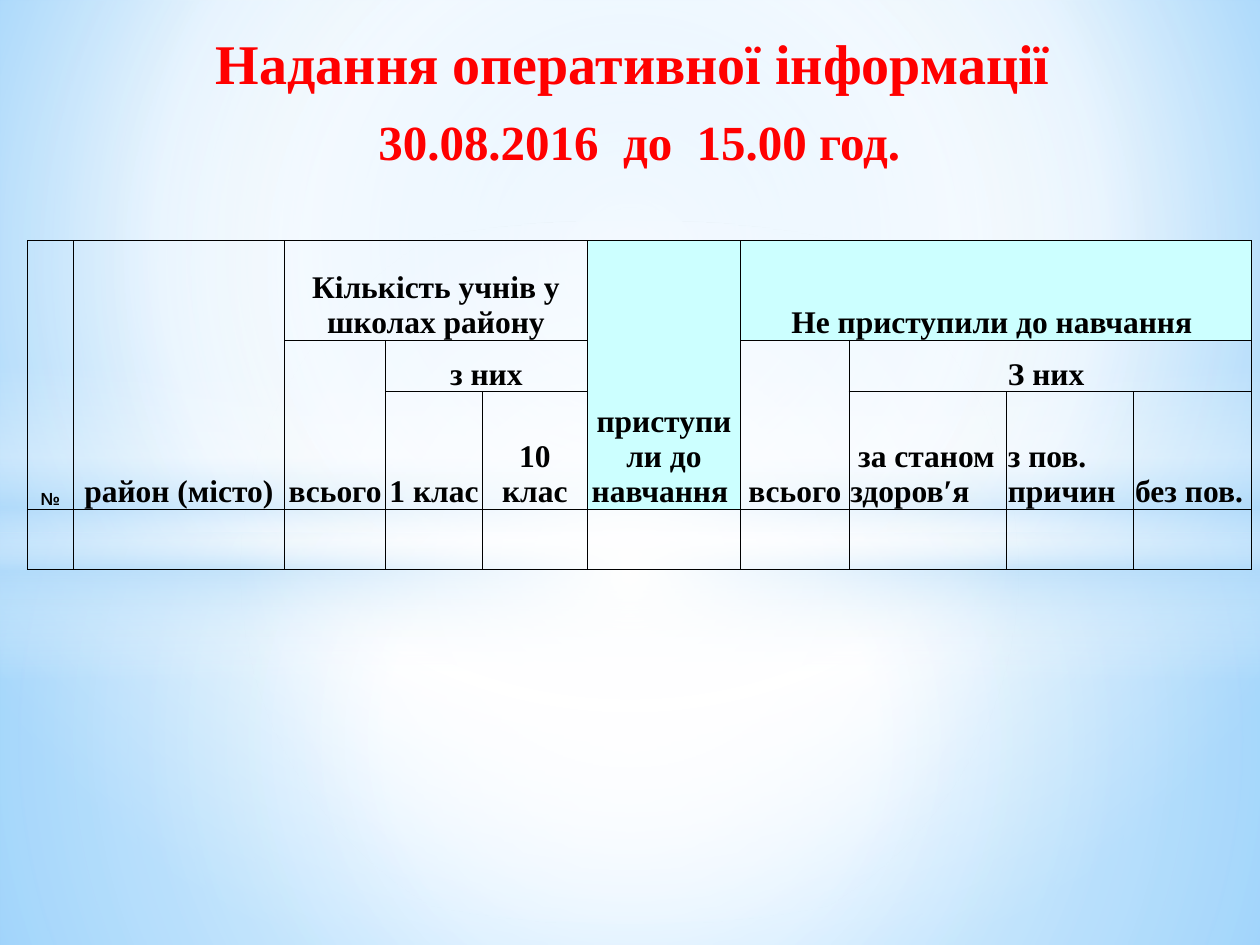
from dataclasses import dataclass

from lxml import etree
from pptx import Presentation
from pptx import util as u
from pptx.dml.color import RGBColor
from pptx.enum import shapes, text
from pptx.oxml import ns


@dataclass(frozen=True)
class Theme:
    serif: str = "Times New Roman"
    sans: str = "Arial"
    red: str = "FF0000"
    ink: str = "000000"
    aqua: str = "CCFFFF"
    sky: str = "B4DCFA"
    white: str = "FFFFFF"
    head: int = 32
    sub: int = 28
    cell: int = 18
    tiny: int = 10
    rule: float = 0.5


T = Theme()
MID = (50, 50, 50, 50)
COLS = (0.36, 1.68, 0.8, 0.77, 0.83, 1.22, 0.86, 1.25, 1.01, 0.93)
ROWS = (0.79, 0.41, 0.93, 0.48)

# Row, column, rows spanned, columns spanned, text, format
HEADS = (
    (0, 0, 3, 1, "№", {"name": T.sans, "size": T.tiny}),
    (0, 1, 3, 1, "район (місто)", {}),
    (0, 2, 1, 3, "Кількість учнів у школах району", {}),
    (0, 5, 3, 1, "приступили до навчання ", {"fill": T.aqua}),
    (0, 6, 1, 4, "Не приступили до навчання ", {"fill": T.aqua}),
    (1, 2, 2, 1, "всього", {}),
    (1, 3, 1, 2, "з них", {}),
    (1, 6, 2, 1, "всього", {}),
    (1, 7, 1, 3, "З них ", {}),
    (2, 3, 1, 1, "1 клас", {}),
    (2, 4, 1, 1, "10 клас", {}),
    (2, 7, 1, 1, " за станом здоров′я", {"left": True}),
    (2, 8, 1, 1, "з пов. причин", {"left": True}),
    (2, 9, 1, 1, "без пов.", {"left": True}),
)


def apply(obj, fmt):
    for key, val in fmt.items():
        setattr(obj, key, val)


def style(font, name, size, hue):
    apply(font, {"name": name, "size": u.Pt(size), "bold": True})
    font.color.rgb = RGBColor.from_string(hue)


def node(up, tag, **atts):
    return etree.SubElement(up, ns.qn("a:" + tag),
                            {k: str(v) for k, v in atts.items()})


def blend(fill, props, stops, rim=None):
    """Gradient of (place, colour, opacity); radial with rim, else downward."""
    fill.solid()
    old = props.find(ns.qn("a:solidFill"))
    grad = etree.Element(ns.qn("a:gradFill"), rotWithShape="1")
    props.replace(old, grad)
    bag = node(grad, "gsLst")
    for pos, hue, clear in stops:
        tint = node(node(bag, "gs", pos=pos * 1000), "srgbClr", val=hue)
        if clear < 100:
            node(tint, "alpha", val=clear * 1000)
    if rim:
        way = node(grad, "path", path="circle")
        node(way, "fillToRect", **{k: v * 1000 for k, v in zip("ltrb", rim)})
    else:
        node(grad, "lin", ang=5400000, scaled=0)


def veil(slide, kind, top, high, stops, rim=MID):
    box = slide.shapes.add_shape(kind, 0, u.Inches(top),
                                 u.Inches(10), u.Inches(high))
    box.shadow.inherit = False
    box.line.fill.background()
    blend(box.fill, box._element.spPr, stops, rim)


def backdrop(slide):
    back = slide.background
    back.fill.solid()
    props = slide._element.cSld.find(".//" + ns.qn("p:bgPr"))
    blend(back.fill, props, ((0, "9ED5FF", 100), (60, T.white, 100),
                             (100, "5BB9FF", 100)), (20, 10, 20, 60))
    rect, oval = shapes.MSO_SHAPE.RECTANGLE, shapes.MSO_SHAPE.OVAL
    veil(slide, rect, 4.23, 3.27,
         ((0, T.white, 91), (37, T.white, 76), (100, T.sky, 79)))
    veil(slide, rect, 0, 4.23,
         ((0, T.white, 89), (48, T.white, 62), (100, T.sky, 79)))
    veil(slide, rect, 2.9, 2.5,
         ((0, T.white, 0), (29, T.white, 30), (45, T.sky, 40),
          (55, T.white, 26), (65, T.sky, 60), (100, T.white, 0)), None)
    veil(slide, oval, 1.75, 5.58, ((0, T.white, 100), (54, T.white, 0)))


def heading(slide):
    title, box = slide.placeholders
    title._element.getparent().remove(title._element)
    apply(box, {"left": u.Inches(0.52), "top": u.Inches(0.18),
                "width": u.Inches(9.01), "height": u.Inches(1.24)})
    frame = box.text_frame
    apply(frame, {"word_wrap": True, "auto_size": text.MSO_AUTO_SIZE.NONE,
                  "vertical_anchor": text.MSO_ANCHOR.TOP})
    frame.text = "Надання оперативної інформації\n 30.08.2016  до  15.00 год."
    for para, size, gap in zip(frame.paragraphs, (T.head, T.sub), (0, 5.6)):
        apply(para, {"alignment": text.PP_ALIGN.CENTER,
                     "space_before": u.Pt(gap), "space_after": u.Pt(3)})
        style(para.font, T.serif, size, T.red)
    # Bring the heading in front of the backdrop
    slide.shapes._spTree.append(box._element)


def border(cell):
    props = cell._tc.get_or_add_tcPr()
    for side in ("lnL", "lnR", "lnT", "lnB"):
        line = node(props, side, w=u.Pt(T.rule))
        node(node(line, "solidFill"), "srgbClr", val=T.ink)
    cell.fill.background()


def label(cell, words, fmt):
    edge = u.Inches(0.01)
    apply(cell, {"text": words, "vertical_anchor": text.MSO_ANCHOR.BOTTOM,
                 "margin_left": edge, "margin_right": edge,
                 "margin_top": edge, "margin_bottom": 0})
    para = cell.text_frame.paragraphs[0]
    side = text.PP_ALIGN
    para.alignment = side.LEFT if fmt.get("left") else side.CENTER
    style(para.font, fmt.get("name", T.serif), fmt.get("size", T.cell), T.ink)
    if "fill" in fmt:
        cell.fill.solid()
        cell.fill.fore_color.rgb = RGBColor.from_string(fmt["fill"])


def grid(slide):
    table = slide.shapes.add_table(
        len(ROWS), len(COLS), u.Inches(0.22), u.Inches(1.91),
        u.Inches(sum(COLS)), u.Inches(sum(ROWS))).table
    apply(table, {"first_row": False, "horz_banding": False})
    for col, wide in zip(table.columns, COLS):
        col.width = u.Inches(wide)
    for row, high in zip(table.rows, ROWS):
        row.height = u.Inches(high)
    for cell in table.iter_cells():
        border(cell)
    for row, col, down, over, words, fmt in HEADS:
        cell = table.cell(row, col)
        if down * over > 1:
            cell.merge(table.cell(row + down - 1, col + over - 1))
        label(cell, words, fmt)


def main():
    deck = Presentation()
    apply(deck, {"slide_width": u.Inches(10), "slide_height": u.Inches(7.5)})
    slide = deck.slides.add_slide(deck.slide_layouts[0])
    backdrop(slide)
    heading(slide)
    grid(slide)
    deck.save("out.pptx")


if __name__ == "__main__":
    main()
